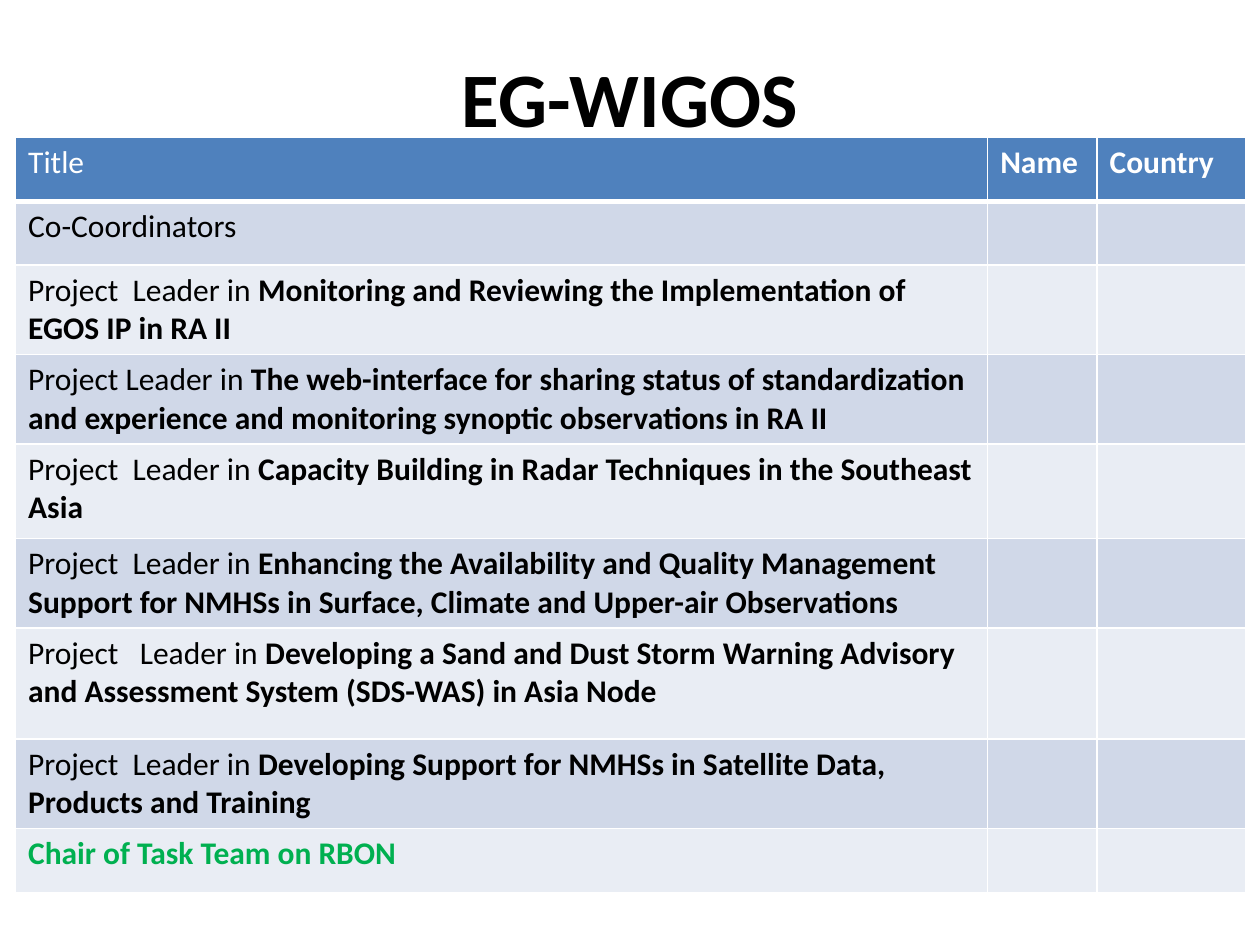
import pptx
import pptx.dml.color
import pptx.enum.text
import pptx.oxml
import pptx.oxml.ns
import pptx.util
from pptx.util import Pt

FONT = "Calibri"
BLACK, WHITE, GREEN = "000000", "FFFFFF", "00B050"
HEADER_FILL, BAND_FILLS = "4F81BD", ("D0D8E8", "E9EDF4")


def color(hex_string):
    return pptx.dml.color.RGBColor.from_string(hex_string)


def add_text(paragraph, text, size=18, bold=False, fill=BLACK):
    run = paragraph.add_run()
    run.text = text
    run.font.name = FONT
    run.font.size = Pt(size)
    run.font.bold = bold
    run.font.color.rgb = color(fill)


class SlideBuilder:
    def __init__(self, presentation):
        self.slide = presentation.slides.add_slide(presentation.slide_layouts[5])

    def title(self, text, left, top, width, height):
        shape = self.slide.shapes.title
        shape.left, shape.top = Pt(left), Pt(top)
        shape.width, shape.height = Pt(width), Pt(height)
        frame = shape.text_frame
        frame.vertical_anchor = pptx.enum.text.MSO_ANCHOR.MIDDLE
        paragraph = frame.paragraphs[0]
        paragraph.alignment = pptx.enum.text.PP_ALIGN.CENTER
        add_text(paragraph, text, size=44, bold=True)

    def table(self, left, top, widths, heights):
        shape = self.slide.shapes.add_table(
            len(heights), len(widths), Pt(left), Pt(top),
            Pt(sum(widths)), Pt(sum(heights)))
        table = shape.table
        for column, width in zip(table.columns, widths):
            column.width = Pt(width)
        for row, height in zip(table.rows, heights):
            row.height = Pt(height)
        return table

    def cell(self, cell, runs, fill, bottom=1):
        for text, options in runs:
            add_text(cell.text_frame.paragraphs[0], text, **options)
        properties = cell._tc.get_or_add_tcPr()
        for side, width in (("L", 1), ("R", 1), ("T", 1), ("B", bottom)):
            properties.append(pptx.oxml.parse_xml(
                f'<a:ln{side} {pptx.oxml.ns.nsdecls("a")} w="{Pt(width)}">'
                f'<a:solidFill><a:srgbClr val="{WHITE}"/></a:solidFill></a:ln{side}>'))
        cell.fill.solid()
        cell.fill.fore_color.rgb = color(fill)


def leader(project, prefix="Project  Leader in "):
    return [(prefix, {}), (project, {"bold": True})]


HEADER = [
    [("Title", {"fill": WHITE})],
    [("Name", {"fill": WHITE, "bold": True})],
    [("Country", {"fill": WHITE, "bold": True})],
]
ROLES = [
    [("Co-Coordinators", {})],
    leader("Monitoring and Reviewing the Implementation of EGOS IP in RA II"),
    leader("The web-interface for sharing status of standardization and experience "
           "and monitoring synoptic observations in RA II", "Project Leader in "),
    leader("Capacity Building in Radar Techniques in the Southeast Asia"),
    leader("Enhancing the Availability and Quality Management Support for NMHSs "
           "in Surface, Climate and Upper-air Observations"),
    leader("Developing a Sand and Dust Storm Warning Advisory and Assessment System "
           "(SDS-WAS) in Asia Node", "Project   Leader in "),
    leader("Developing Support for NMHSs in Satellite Data, Products and Training"),
    [("Chair of Task Team on RBON", {"fill": GREEN, "bold": True})],
]


def main():
    presentation = pptx.Presentation()
    presentation.slide_width, presentation.slide_height = Pt(720), Pt(540)
    builder = SlideBuilder(presentation)

    # Title
    builder.title("EG-WIGOS", 36, 21.6, 648, 67)

    # Table of roles, with empty name and country columns
    table = builder.table(
        8.9, 78.5, widths=[555.5, 62.5, 85],
        heights=[36.5, 36.5, 36.5, 36.5, 54, 39.6, 63.4, 39.6, 36.5])
    for column, runs in enumerate(HEADER):
        builder.cell(table.cell(0, column), runs, HEADER_FILL, bottom=3)
    for index, role in enumerate(ROLES):
        for column, runs in enumerate([role, [], []]):
            builder.cell(table.cell(index + 1, column), runs, BAND_FILLS[index % 2])

    presentation.save("out.pptx")


if __name__ == "__main__":
    main()
